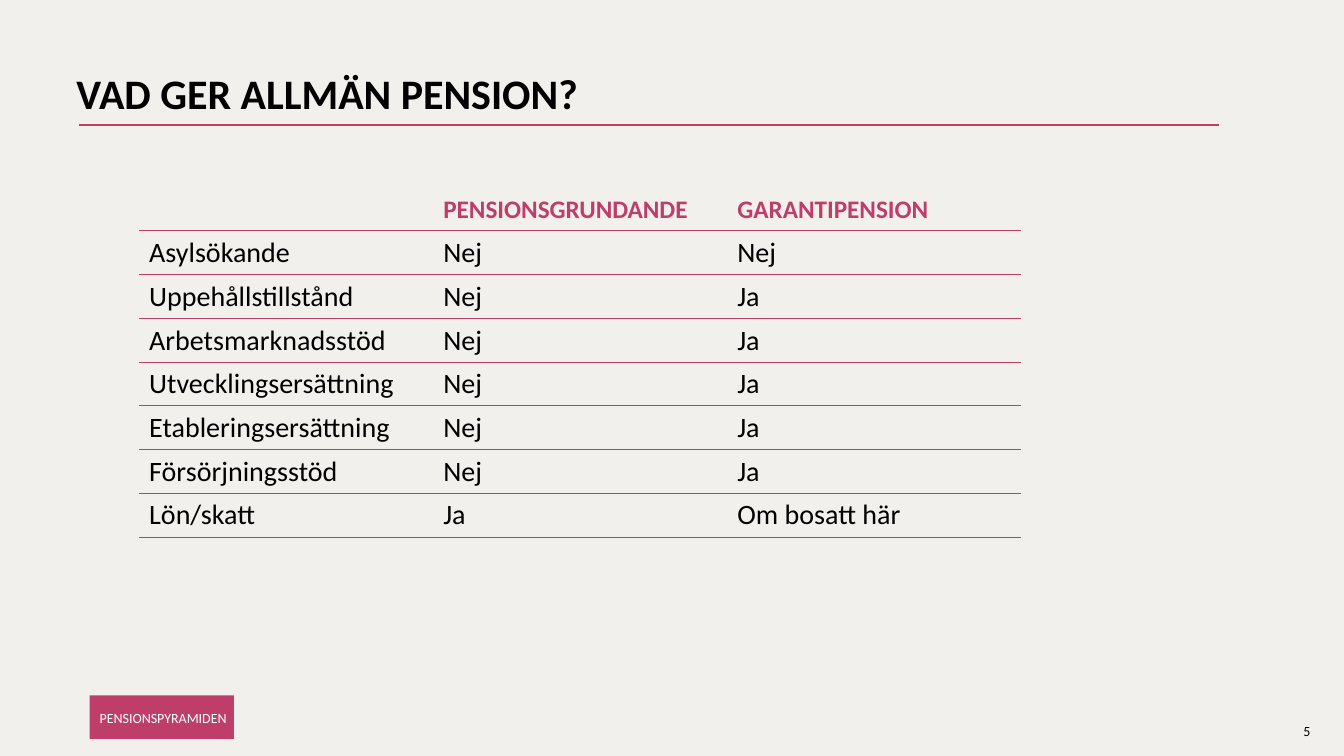
from lxml import etree
from pptx import Presentation
from pptx import util as u
from pptx.dml.color import RGBColor
from pptx.enum import shapes, text
from pptx.oxml import ns

PAPER = RGBColor(0xF1, 0xF0, 0xEC)
BLACK = RGBColor(0x00, 0x00, 0x00)
WHITE = RGBColor(0xFF, 0xFF, 0xFF)
RASPBERRY = RGBColor(0xBE, 0x3E, 0x69)
NO_GRID_STYLE = "{2D5ABB26-0587-4C30-8999-92F81FD0307C}"


def write(frame, wording, size, color, bold=False):
    paragraph = frame.paragraphs[0]
    paragraph.alignment = text.PP_ALIGN.LEFT
    run = paragraph.add_run()
    run.text = wording
    for key, value in {"name": "Calibri", "size": u.Pt(size), "bold": bold}.items():
        setattr(run.font, key, value)
    run.font.color.rgb = color
    return paragraph


def underline_cell(cell, points):
    properties = cell._tc.get_or_add_tcPr()
    border = etree.Element(ns.qn("a:lnB"), w=str(u.Pt(points)))
    solid = etree.SubElement(border, ns.qn("a:solidFill"))
    etree.SubElement(solid, ns.qn("a:srgbClr"), val=str(RASPBERRY))
    properties.insert(0, border)


deck = Presentation()
deck.slide_width = u.Inches(13.33)
deck.slide_height = u.Inches(7.5)
slide = deck.slides.add_slide(deck.slide_layouts[6])
slide.background.fill.solid()
slide.background.fill.fore_color.rgb = PAPER

page_number = slide.shapes.add_textbox(u.Inches(12.83), u.Inches(7.12), u.Inches(0.4), u.Inches(0.27))
page_number.text_frame.word_wrap = True
write(page_number.text_frame, "5", 10, BLACK)

title_rule = slide.shapes.add_connector(
    shapes.MSO_CONNECTOR.STRAIGHT, u.Inches(0.78), u.Inches(1.24), u.Inches(12.09), u.Inches(1.24))
title_rule.line.color.rgb = RASPBERRY
title_rule.line.width = u.Pt(1.5)
etree.SubElement(title_rule._element.spPr, ns.qn("a:effectLst"))

title = slide.shapes.add_textbox(u.Inches(0.66), u.Inches(0.68), u.Inches(11.5), u.Inches(1.45))
title.text_frame.word_wrap = True
write(title.text_frame, "VAD GER ALLMÄN PENSION?", 30, BLACK, True).line_spacing = 0.9

pension_rights = [
    ("", "PENSIONSGRUNDANDE", "GARANTIPENSION"),
    ("Asylsökande", "Nej", "Nej"),
    ("Uppehållstillstånd", "Nej", "Ja"),
    ("Arbetsmarknadsstöd", "Nej", "Ja"),
    ("Utvecklingsersättning", "Nej", "Ja"),
    ("Etableringsersättning", "Nej", "Ja"),
    ("Försörjningsstöd", "Nej", "Ja"),
    ("Lön/skatt", "Ja", "Om bosatt här"),
]
rights_frame = slide.shapes.add_table(
    len(pension_rights), 3, u.Inches(1.38), u.Inches(1.88), u.Inches(8.75), u.Inches(3.28))
rights = rights_frame.table
rights.first_row = True
rights.horz_banding = False
rights._tbl.tblPr.find(ns.qn("a:tableStyleId")).text = NO_GRID_STYLE

for row_index, answers in enumerate(pension_rights):
    rights.rows[row_index].height = u.Inches(0.41)
    is_header = row_index == 0
    size, color, rule_width = (18, RASPBERRY, 1) if is_header else (20, BLACK, 0.5)
    for column_index, answer in enumerate(answers):
        cell = rights.cell(row_index, column_index)
        cell.fill.background()
        underline_cell(cell, rule_width)
        if answer:
            write(cell.text_frame, answer, size, color, is_header)

section_tag = slide.shapes.add_shape(
    shapes.MSO_SHAPE.RECTANGLE, u.Inches(0.89), u.Inches(6.9), u.Inches(1.43), u.Inches(0.43))
section_tag.shadow.inherit = False
section_tag.fill.solid()
section_tag.fill.fore_color.rgb = RASPBERRY
section_tag.line.fill.background()
tag_format = {
    "margin_left": u.Inches(0.1),
    "margin_top": u.Inches(0.08),
    "margin_right": u.Inches(0.04),
    "margin_bottom": u.Inches(0.05),
    "vertical_anchor": text.MSO_ANCHOR.MIDDLE,
    "word_wrap": False,
}
for key, value in tag_format.items():
    setattr(section_tag.text_frame, key, value)
write(section_tag.text_frame, "PENSIONSPYRAMIDEN", 10, WHITE).line_spacing = 0.9

deck.save("out.pptx")
